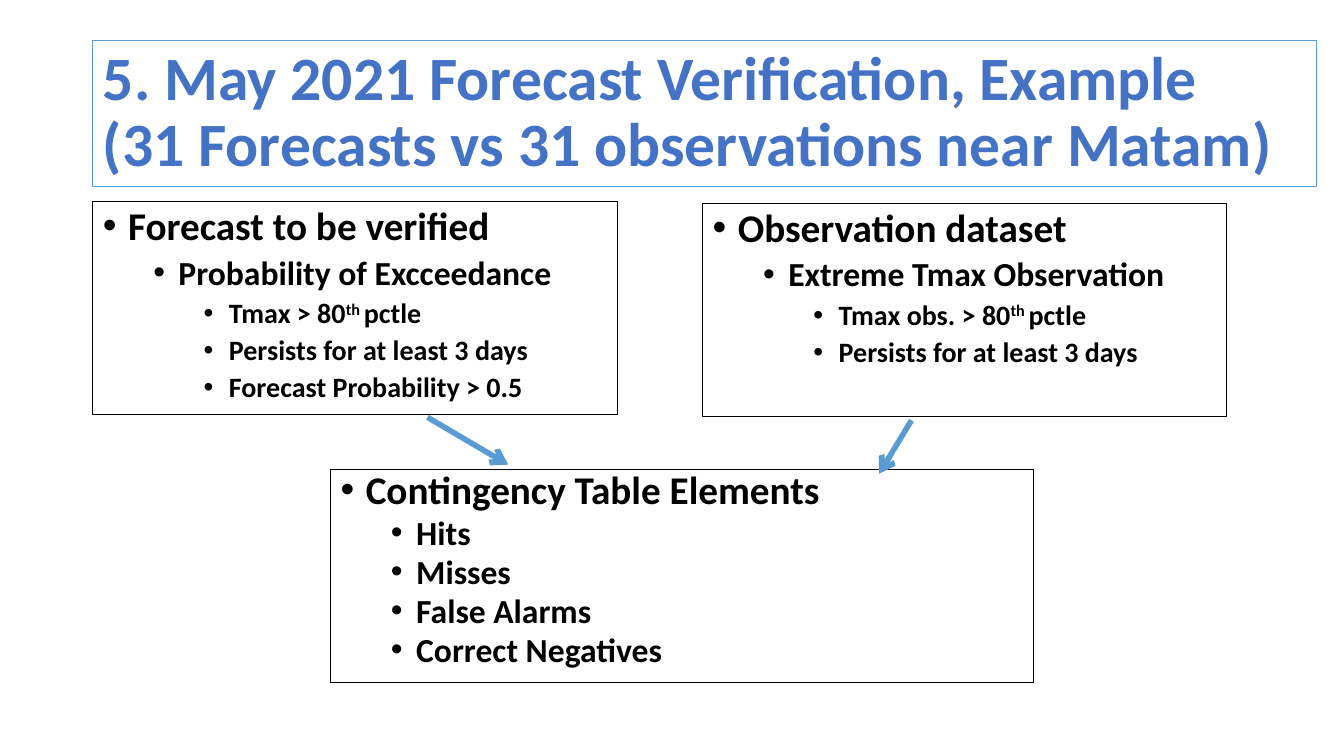
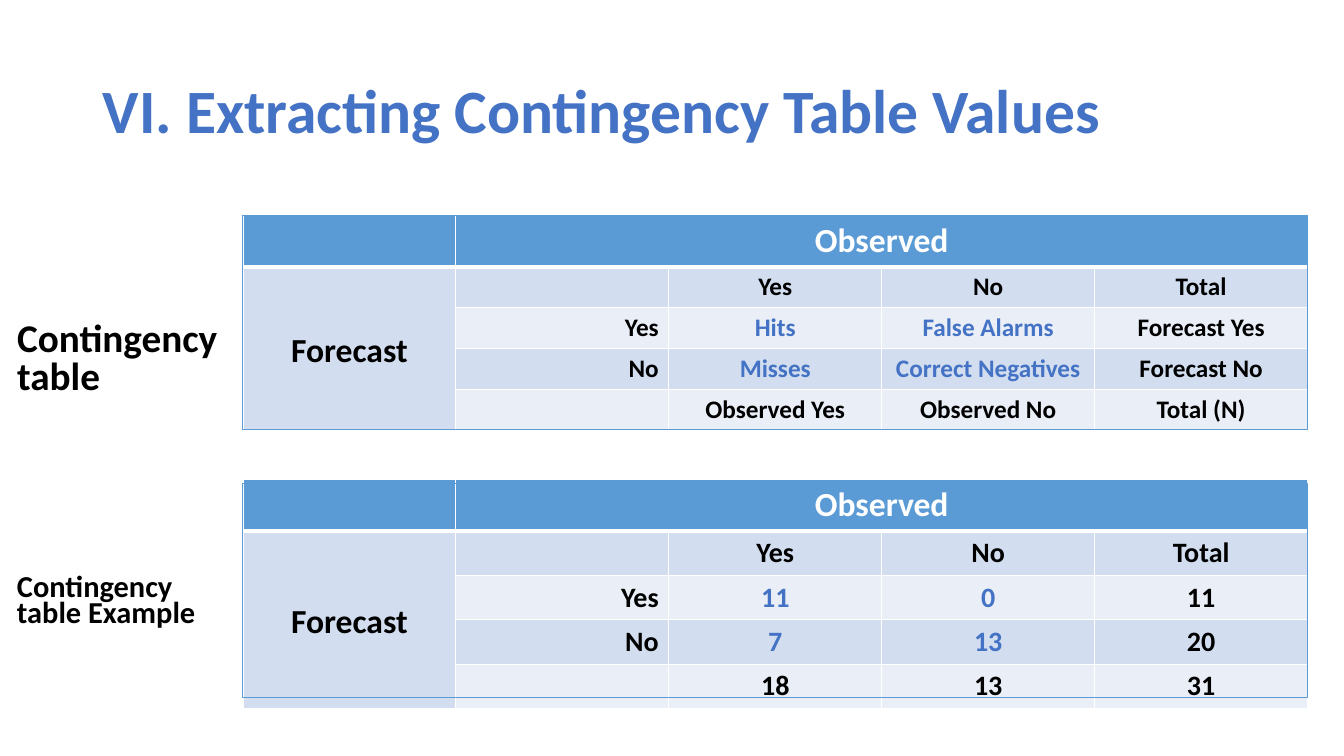
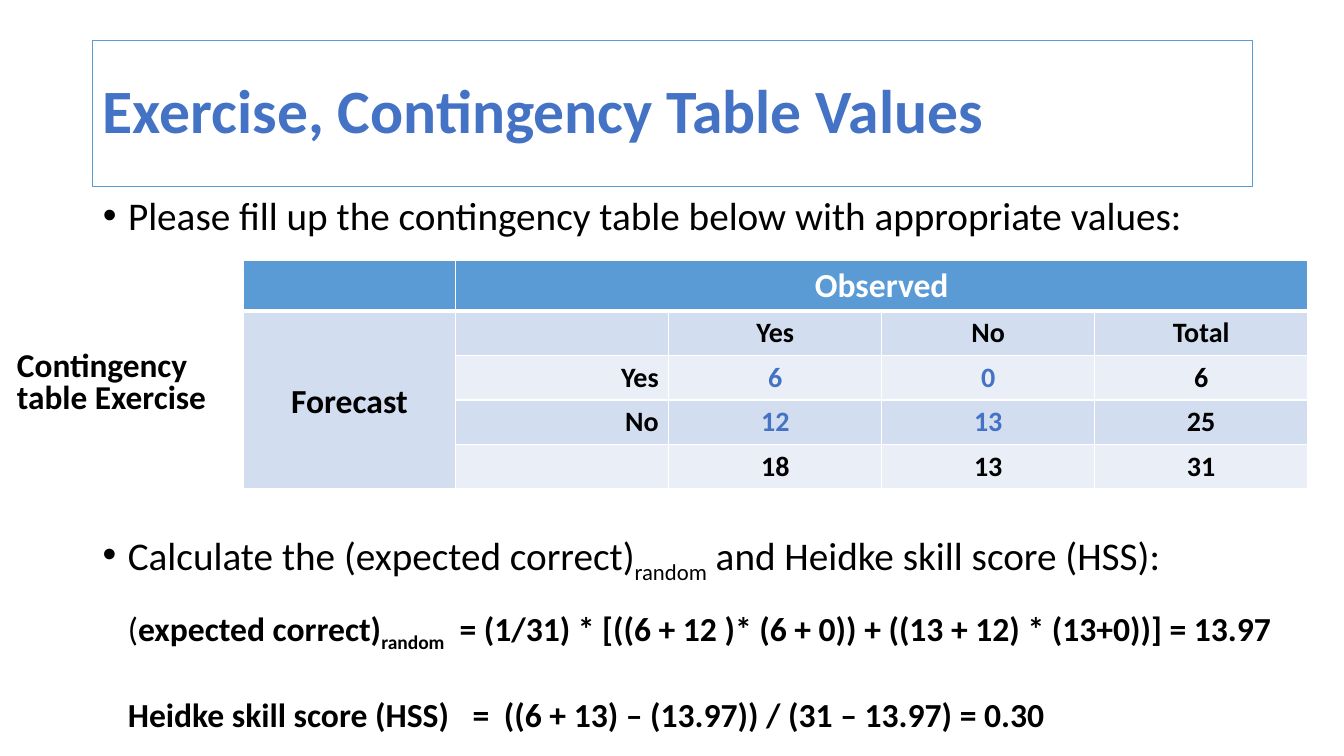
from lxml.etree import SubElement
from pptx import Presentation
from pptx.dml.color import RGBColor
from pptx.enum.shapes import MSO_CONNECTOR, MSO_SHAPE
from pptx.enum.text import MSO_ANCHOR, MSO_AUTO_SIZE, PP_ALIGN
from pptx.oxml.ns import qn
from pptx.util import Inches, Pt

BLUE = RGBColor(0x44, 0x72, 0xC4)
SKY = RGBColor(0x5B, 0x9B, 0xD5)
BAND_DARK = RGBColor(0xD2, 0xDE, 0xEF)
BAND_LIGHT = RGBColor(0xEA, 0xEF, 0xF7)
BLACK = RGBColor(0, 0, 0)
WHITE = RGBColor(255, 255, 255)
FONT = "Calibri"
LEVEL_SIZES = (28, 24, 20)
SUPER, SUB = 30, -25
TABLE_LEFT, TABLE_WIDTH, COLUMNS = 2.41, 10.56, 5
HEADER_HEIGHT = 0.5


def place(shape, box):
    shape.left, shape.top, shape.width, shape.height = map(Inches, box)


def outline(shape, color):
    shape.line.color.rgb = color
    shape.line.width = Pt(0.75)


def format_run(run, size, color=BLACK, bold=True):
    run.font.name = FONT
    run.font.size = Pt(size)
    run.font.bold = bold
    run.font.color.rgb = color


def add_runs(paragraph, parts, size, bold=True):
    for text, baseline in parts:
        run = paragraph.add_run()
        run.text = text
        format_run(run, size, bold=bold)
        if baseline:
            run.font._element.set("baseline", str(baseline * 1000))


def plain(text):
    return [(text, 0)]


def set_bullet(paragraph, level):
    paragraph.level = level
    properties = paragraph._p.get_or_add_pPr()
    properties.set("marL", str(Inches(0.25 + 0.5 * level)))
    properties.set("indent", str(Inches(-0.25)))
    SubElement(properties, qn("a:buFont")).set("typeface", "Arial")
    SubElement(properties, qn("a:buChar")).set("char", "•")


def new_frame(slide, box, shape=None):
    shape = shape or slide.shapes.add_textbox(*map(Inches, box))
    place(shape, box)
    frame = shape.text_frame
    frame.word_wrap = True
    frame.auto_size = MSO_AUTO_SIZE.NONE
    frame.vertical_anchor = MSO_ANCHOR.TOP
    return shape, frame


def add_list(slide, box, items, spacing=0.9, bold=True, placeholder=None):
    shape, frame = new_frame(slide, box, placeholder)
    for index, (level, parts) in enumerate(items):
        paragraph = frame.add_paragraph() if index else frame.paragraphs[0]
        paragraph.line_spacing = spacing
        paragraph.space_before = Pt(5 if level else 10)
        set_bullet(paragraph, level)
        add_runs(paragraph, parts, LEVEL_SIZES[level], bold)
    return shape


def add_label(slide, box, text, size, spacing=0.8, placeholder=None):
    frame = new_frame(slide, box, placeholder)[1]
    frame.text = text
    paragraph = frame.paragraphs[0]
    paragraph.line_spacing = spacing
    paragraph.space_before = Pt(10)
    properties = paragraph._p.get_or_add_pPr()
    properties.set("marL", "0")
    properties.set("indent", "0")
    SubElement(properties, qn("a:buNone"))
    format_run(paragraph.runs[0], size)


def add_titled_slide(presentation, text, width=11.5, framed=True):
    slide = presentation.slides.add_slide(presentation.slide_layouts[1])
    title, frame = new_frame(slide, (0.92, 0.4, width, 1.45), slide.shapes.title)
    frame.vertical_anchor = MSO_ANCHOR.MIDDLE
    frame.text = text
    paragraph = frame.paragraphs[0]
    paragraph.alignment = PP_ALIGN.LEFT
    paragraph.line_spacing = 0.9
    for run in paragraph.runs:
        format_run(run, 44, BLUE)
    if framed:
        outline(title, SKY)
    return slide, slide.placeholders[1]


def add_arrow(slide, start, end):
    connector = slide.shapes.add_connector(
        MSO_CONNECTOR.STRAIGHT, *map(Inches, start + end))
    connector.line.color.rgb = SKY
    connector.line.width = Pt(4)
    SubElement(connector.line._get_or_add_ln(), qn("a:tailEnd")).set("type", "arrow")
    SubElement(connector._element.spPr, qn("a:effectLst"))


def set_borders(cell, row):
    properties = cell._tc.get_or_add_tcPr()
    widths = {"L": 1, "R": 1, "T": 3 if row == 1 else 1, "B": 1 if row else 3}
    for side, width in widths.items():
        line = SubElement(properties, qn(f"a:ln{side}"), w=str(Pt(width)))
        fill = SubElement(line, qn("a:solidFill"))
        SubElement(fill, qn("a:srgbClr")).set("val", str(WHITE))


def write_cell(cell, text, size, color, alignment):
    cell.text = text
    paragraph = cell.text_frame.paragraphs[0]
    paragraph.alignment = alignment
    format_run(paragraph.runs[0], size, color)


def add_contingency_table(slide, top, size, row_height, values):
    rows = [
        ["", "Observed", "", "", ""],
        ["Forecast", "", "Yes", "No", "Total"],
        ["", "Yes"] + values[0],
        ["", "No"] + values[1],
        ["", ""] + values[2],
    ]
    height = HEADER_HEIGHT + 4 * row_height
    table = slide.shapes.add_table(
        len(rows), COLUMNS, Inches(TABLE_LEFT), Inches(top),
        Inches(TABLE_WIDTH), Inches(height)).table
    for index, row in enumerate(rows):
        table.rows[index].height = Inches(row_height if index else HEADER_HEIGHT)
        for column, text in enumerate(row):
            cell = table.cell(index, column)
            set_borders(cell, index)
            cell.fill.solid()
            band = BAND_DARK if index % 2 or column == 0 else BAND_LIGHT
            cell.fill.fore_color.rgb = band if index else SKY
            if not text:
                continue
            heading = index == 0 or column == 0
            counted = index in (2, 3) and column in (2, 3)
            color = BLUE if counted else BLACK if index else WHITE
            side = column == 1 and index > 0
            write_cell(cell, text, 24 if heading else size, color,
                       PP_ALIGN.RIGHT if side else PP_ALIGN.CENTER)
    table.cell(0, 1).merge(table.cell(0, 4))
    table.cell(1, 0).merge(table.cell(4, 0))
    table.cell(1, 0).vertical_anchor = MSO_ANCHOR.MIDDLE
    table.cell(1, 0).margin_top = Inches(0.1)


def add_table_frame(slide, top):
    frame = slide.shapes.add_shape(
        MSO_SHAPE.RECTANGLE, *map(Inches, (TABLE_LEFT, top, TABLE_WIDTH, 2.12)))
    frame.shadow.inherit = False
    frame.fill.background()
    outline(frame, SKY)


def add_formulas(slide, box, formulas):
    frame = new_frame(slide, box)[1]
    for index, (parts, stops) in enumerate(formulas):
        paragraph = frame.add_paragraph() if index else frame.paragraphs[0]
        paragraph.space_before = Pt(29 * index)
        add_runs(paragraph, parts, 24)
        tabs = SubElement(paragraph._p.get_or_add_pPr(), qn("a:tabLst"))
        for stop in stops:
            SubElement(tabs, qn("a:tab"), pos=str(Inches(stop)), algn="l")
    frame.paragraphs[0].runs[0].font.bold = False


def build_verification_slide(presentation):
    slide, body = add_titled_slide(
        presentation,
        "5. May 2021 Forecast Verification, Example\v"
        "(31 Forecasts vs 31 observations near Matam)", 12.14)
    persists = (2, plain("Persists for at least 3 days"))
    forecast = add_list(slide, (0.92, 2, 5.2, 2.11), [
        (0, plain("Forecast to be verified")),
        (1, plain("Probability of Excceedance")),
        (2, [("Tmax > 80", 0), ("th ", SUPER), ("pctle", 0)]),
        persists,
        (2, plain("Forecast Probability > 0.5")),
    ], placeholder=body)
    forecast.fill.solid()
    forecast.fill.fore_color.rgb = WHITE
    observation = add_list(slide, (6.97, 2.02, 5.2, 2.11), [
        (0, plain("Observation dataset")),
        (1, plain("Extreme Tmax Observation")),
        (2, [("Tmax obs. > 80", 0), ("th ", SUPER), ("pctle", 0)]),
        persists,
    ])
    outcomes = ("Hits", "Misses", "False Alarms", "Correct Negatives")
    elements = add_list(
        slide, (3.28, 4.66, 6.97, 2.11),
        [(0, plain("Contingency Table Elements"))]
        + [(1, plain(outcome)) for outcome in outcomes], 0.8)
    for shape in (forecast, observation, elements):
        outline(shape, BLACK)
    add_arrow(slide, (4.24, 4.14), (5.04, 4.61))
    add_arrow(slide, (9.04, 4.17), (8.72, 4.7))


def build_values_slide(presentation):
    slide, body = add_titled_slide(
        presentation, "VI. Extracting Contingency Table Values", framed=False)
    add_label(slide, (0.07, 3.15, 2.4, 0.88), "Contingency table", 28,
              placeholder=body)
    add_contingency_table(slide, 2.14, 18, 0.4, [
        ["Hits", "False Alarms", "Forecast Yes"],
        ["Misses", "Correct Negatives", "Forecast No"],
        ["Observed Yes", "Observed No", "Total (N)"],
    ])
    add_contingency_table(slide, 4.76, 20, 0.44, [
        ["11", "0", "11"], ["7", "13", "20"], ["18", "13", "31"]])
    add_label(slide, (0.07, 5.68, 2.12, 0.88), "Contingency table Example", 21.7, 0.7)
    for top in (2.14, 4.8):
        add_table_frame(slide, top)


def build_exercise_slide(presentation):
    slide, body = add_titled_slide(presentation, "Exercise, Contingency Table Values")
    add_contingency_table(slide, 2.58, 20, 0.44, [
        ["6", "0", "6"], ["12", "13", "25"], ["18", "13", "31"]])
    add_label(slide, (0.07, 3.44, 2.12, 0.88), "Contingency table Exercise", 23.8)
    add_list(slide, (0.92, 1.9, 11.5, 0.64), [
        (0, plain("Please fill up the contingency table below with appropriate values:")),
    ], bold=False, placeholder=body)
    add_list(slide, (0.92, 5.23, 11.5, 0.64), [
        (0, [("Calculate the (expected correct)", 0), ("random", SUB),
             (" and Heidke skill score (HSS):", 0)]),
    ], bold=False)
    add_formulas(slide, (1.17, 5.98, 11.74, 1.31), [
        ([("(", 0), ("expected correct)", 0), ("random", SUB),
          ("\t= (1/31) * [((6 + 12 )* (6 + 0)) + ((13 + 12) * (13+0))] = 13.97", 0)],
         [3.29]),
        (plain("Heidke skill score (HSS)\t=\t((6 + 13) – (13.97)) / (31 – 13.97) = 0.30"),
         [3.42, 3.73]),
    ])


def main():
    presentation = Presentation()
    presentation.slide_width = Inches(13.33)
    presentation.slide_height = Inches(7.5)
    build_verification_slide(presentation)
    build_values_slide(presentation)
    build_exercise_slide(presentation)
    presentation.save("out.pptx")


if __name__ == "__main__":
    main()
